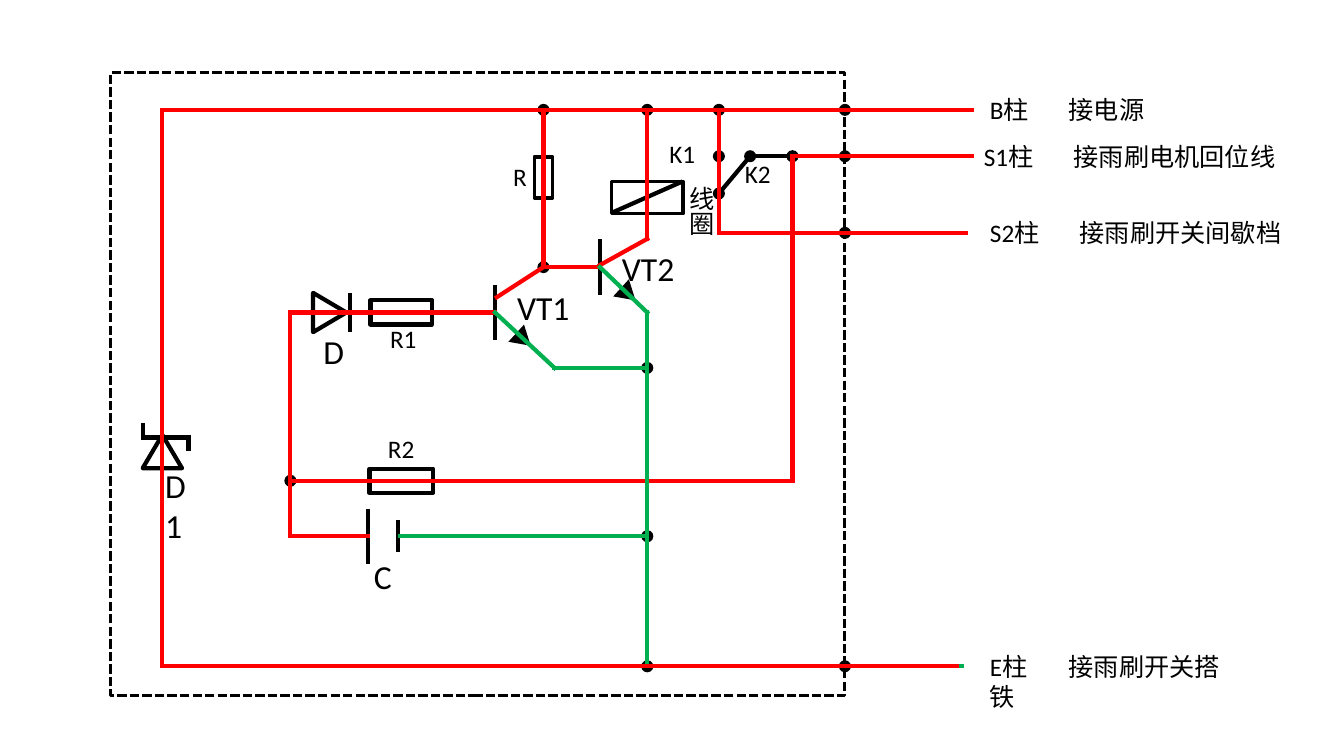
"""Build the circuit diagram slide of an intermittent wiper relay."""
from itertools import pairwise
from lxml import etree
from pptx import Presentation
from pptx.dml.color import RGBColor
from pptx.enum.dml import MSO_LINE
from pptx.enum.shapes import MSO_CONNECTOR, MSO_SHAPE
from pptx.enum.text import MSO_AUTO_SIZE
from pptx.oxml.ns import qn
from pptx.util import Inches, Pt

STRAIGHT = MSO_CONNECTOR.STRAIGHT
RECT, OVAL = MSO_SHAPE.RECTANGLE, MSO_SHAPE.OVAL
TRIANGLE = MSO_SHAPE.ISOSCELES_TRIANGLE
DASH = MSO_LINE.SQUARE_DOT
GROW = MSO_AUTO_SIZE.SHAPE_TO_FIT_TEXT

BLACK = RGBColor(0x00, 0x00, 0x00)
RED = RGBColor(0xFF, 0x00, 0x00)
GREEN = RGBColor(0x00, 0xB0, 0x50)
LATIN, CJK = "Calibri", "Noto Sans CJK JP"

B_RAIL, S1_RAIL, S2_RAIL, E_RAIL = 1.09, 1.55, 2.31, 6.61
VT2_Y, VT1_Y, EMITTER_Y, R2_Y, CAP_Y = 2.65, 3.1, 3.65, 4.77, 5.32
ZENER_X, LOOP_X, VT1_X, R_X, VT2_X = 1.61, 2.88, 4.91, 5.39, 5.95
COIL_X, K1_X, K2_X, S1_X, FRAME_X = 6.42, 7.13, 7.44, 7.86, 8.38
CAP_LEFT, CAP_RIGHT, RAIL_END = 3.65, 3.95, 9.64
K_PIVOT_Y, R1_X = 1.92, 3.98


def add_route(shapes, color, *points):
    """Draw a wire through the points, one segment per pair."""
    for start, end in pairwise(points):
        wire = shapes.add_connector(STRAIGHT, *[Inches(v) for v in start + end])
        wire.line.color.rgb = color
        wire.line.width = Pt(3)
        if len(points) > 2:
            wire._element.spPr.get_or_add_ln().set("cap", "sq")
        etree.SubElement(wire._element.spPr, qn("a:effectLst"))


def add_symbol(shapes, kind, center, size, line=None, rotation=0):
    """Draw a centred symbol: outlined if a line width is given, else solid."""
    (x, y), (w, h) = center, size
    box = (x - w / 2, y - h / 2, w, h)
    sp = shapes.add_shape(kind, *[Inches(v) for v in box])
    sp.shadow.inherit = False
    sp.rotation = rotation
    if line:
        sp.fill.background()
        sp.line.color.rgb = BLACK
        sp.line.width = Pt(line)
    else:
        sp.fill.solid()
        sp.fill.fore_color.rgb = BLACK
        sp.line.fill.background()
    return sp


def add_label(shapes, text, x, y, size=18, width=None, tab=None, latin=LATIN):
    """Write a label; it wraps only if a width is given."""
    height = 0.1 + size / 60
    box = (x, y, width or 0.2 + 0.0075 * size * len(text), height)
    tf = shapes.add_textbox(*[Inches(v) for v in box]).text_frame
    tf.word_wrap = width is not None
    tf.auto_size = GROW
    p = tf.paragraphs[0]
    if tab:
        stops = etree.SubElement(p._p.get_or_add_pPr(), qn("a:tabLst"))
        etree.SubElement(stops, qn("a:tab"), pos=str(Inches(tab)), algn="l")
    r = p.add_run()
    r.text = text
    r.font.size = Pt(size)
    r.font.name = latin
    r.font.color.rgb = BLACK
    etree.SubElement(r._r.get_or_add_rPr(), qn("a:ea"), typeface=CJK)


def add_vertical_label(shapes, text, x, y):
    """Write a label whose characters run downwards."""
    box = (x, y, 0.5, 0.61)
    add_label(shapes, text, x, y, latin=CJK)
    sp = shapes[-1]
    sp.width, sp.height = Inches(box[2]), Inches(box[3])
    sp.text_frame._txBody.bodyPr.set("vert", "eaVert")


def add_bar(shapes, x, y, length):
    """Draw a vertical bar centred on a point."""
    add_route(shapes, BLACK, (x, y - length / 2), (x, y + length / 2))


def add_resistors(shapes):
    """Draw the three resistors with their names."""
    add_symbol(shapes, RECT, (R1_X, VT1_Y), (0.61, 0.24), 3)
    add_label(shapes, "R1", 3.77, 3.16)
    add_symbol(shapes, RECT, (R1_X, R2_Y), (0.63, 0.24), 3)
    add_label(shapes, "R2", 3.75, 4.25)
    add_symbol(shapes, RECT, (R_X, 1.76), (0.18, 0.41), 2.5)
    add_label(shapes, "R", 4.99, 1.55)


def add_diodes(shapes):
    """Draw the diode D and the zener diode D1."""
    size = (0.39, 0.33)
    add_symbol(shapes, TRIANGLE, (3.27, VT1_Y), size, 3, rotation=90)
    add_bar(shapes, 3.47, VT1_Y, 0.38)
    add_label(shapes, "D", 3.11, 3.23, 24)
    add_symbol(shapes, TRIANGLE, (ZENER_X, 4.48), size, 3)
    left, right, y = 1.42, 1.87, 4.34
    add_route(shapes, BLACK, (left, y - 0.12), (left, y), (right, y), (right, y + 0.11))
    add_label(shapes, "D1", 1.54, 4.56, 24)


def add_capacitor(shapes):
    """Draw the long and the short plate of capacitor C."""
    for x, length in ((CAP_LEFT, 0.55), (CAP_RIGHT, 0.32)):
        add_bar(shapes, x, CAP_Y, length)
    add_label(shapes, "C", 3.61, 5.47, 24)


def add_transistor(shapes, name, x, y, label_y):
    """Draw the bar, emitter arrow and name of a transistor."""
    add_bar(shapes, x, y, 0.55)
    arrow = add_symbol(shapes, TRIANGLE, (x + 0.28, y + 0.27), (0.23, 0.19),
                       rotation=132.3)
    arrow.adjustments[0] = 0.48
    add_label(shapes, name, x + 0.12, label_y, 24)


def add_relay(shapes):
    """Draw the relay coil and its changeover switch."""
    coil = shapes.add_group_shape().shapes
    add_symbol(coil, RECT, (COIL_X, 1.96), (0.71, 0.32), 2.5)
    add_route(coil, BLACK, (6.77, 1.8), (6.07, 2.11))
    add_vertical_label(shapes, "线圈", 6.65, 1.75)
    add_route(shapes, BLACK, (S1_X, S1_RAIL), (K2_X, S1_RAIL), (K1_X, K_PIVOT_Y))
    add_label(shapes, "K1", 6.54, 1.32)
    add_label(shapes, "K2", 7.29, 1.52)


def add_terminal(shapes, name, use, x, rail, width):
    """Write the name and use of a terminal beside its rail."""
    tab = 0.67 + 0.11 * len(name.rstrip("柱"))
    add_label(shapes, f"{name}\t{use}", x, rail - 0.2, width=width, tab=tab)


def add_nodes(shapes):
    """Mark the junctions, grouped by the row they lie on."""
    rows = {
        B_RAIL: (R_X, COIL_X, K1_X, FRAME_X),
        S1_RAIL: (K1_X, K2_X, S1_X, FRAME_X),
        K_PIVOT_Y: (K1_X,),
        S2_RAIL: (FRAME_X,),
        VT2_Y: (R_X,),
        EMITTER_Y: (COIL_X,),
        R2_Y: (LOOP_X,),
        CAP_Y: (COIL_X,),
        E_RAIL: (COIL_X, FRAME_X),
    }
    for y, columns in rows.items():
        for x in columns:
            add_symbol(shapes, OVAL, (x, y), (0.12, 0.12))


def add_current_paths(shapes):
    """Draw the red supply paths and the green paths to ground."""
    add_route(shapes, RED, (R_X, B_RAIL), (R_X, VT2_Y), (VT2_X, VT2_Y))
    add_route(shapes, RED, (R_X, VT2_Y), (VT1_X, VT1_Y - 0.14))
    add_route(shapes, RED, (COIL_X, B_RAIL), (COIL_X, 2.37), (VT2_X, VT2_Y - 0.02))
    add_route(shapes, RED, (K1_X, B_RAIL), (K1_X, S2_RAIL), (9.58, S2_RAIL))
    add_route(shapes, RED, (RAIL_END, S1_RAIL), (S1_X, S1_RAIL), (S1_X, R2_Y),
              (LOOP_X, R2_Y))
    add_route(shapes, RED, (VT1_X, VT1_Y), (LOOP_X, VT1_Y), (LOOP_X, CAP_Y),
              (CAP_LEFT, CAP_Y))
    add_route(shapes, GREEN, (VT2_X, VT2_Y), (COIL_X, VT1_Y), (COIL_X, E_RAIL),
              (9.54, E_RAIL))
    add_route(shapes, GREEN, (VT1_X, VT1_Y), (5.5, EMITTER_Y), (COIL_X, EMITTER_Y))
    add_route(shapes, GREEN, (CAP_RIGHT, CAP_Y), (COIL_X, CAP_Y))
    add_route(shapes, RED, (RAIL_END, B_RAIL), (ZENER_X, B_RAIL), (ZENER_X, E_RAIL),
              (9.49, E_RAIL))


def main():
    """Create the slide and save it."""
    prs = Presentation()
    prs.slide_width, prs.slide_height = Inches(13.33), Inches(7.5)
    s = prs.slides.add_slide(prs.slide_layouts[6])
    shapes = s.shapes
    frame = add_symbol(shapes, RECT, (4.74, 3.81), (7.28, 6.18), 2.25)
    frame.line.dash_style = DASH
    add_resistors(shapes)
    add_diodes(shapes)
    add_capacitor(shapes)
    add_transistor(shapes, "VT1", VT1_X, VT1_Y, 2.8)
    add_transistor(shapes, "VT2", VT2_X, VT2_Y, 2.41)
    add_relay(shapes)
    add_terminal(shapes, "B柱", "接电源", 9.72, B_RAIL, 3.05)
    add_terminal(shapes, "S1柱", "接雨刷电机回位线", 9.66, S1_RAIL, 3.45)
    add_terminal(shapes, "S2柱", "接雨刷开关间歇档", 9.72, S2_RAIL, 3.15)
    add_terminal(shapes, "E柱", "接雨刷开关搭铁", 9.72, E_RAIL, 2.68)
    add_nodes(shapes)
    add_current_paths(shapes)
    prs.save("out.pptx")


if __name__ == "__main__":
    main()
